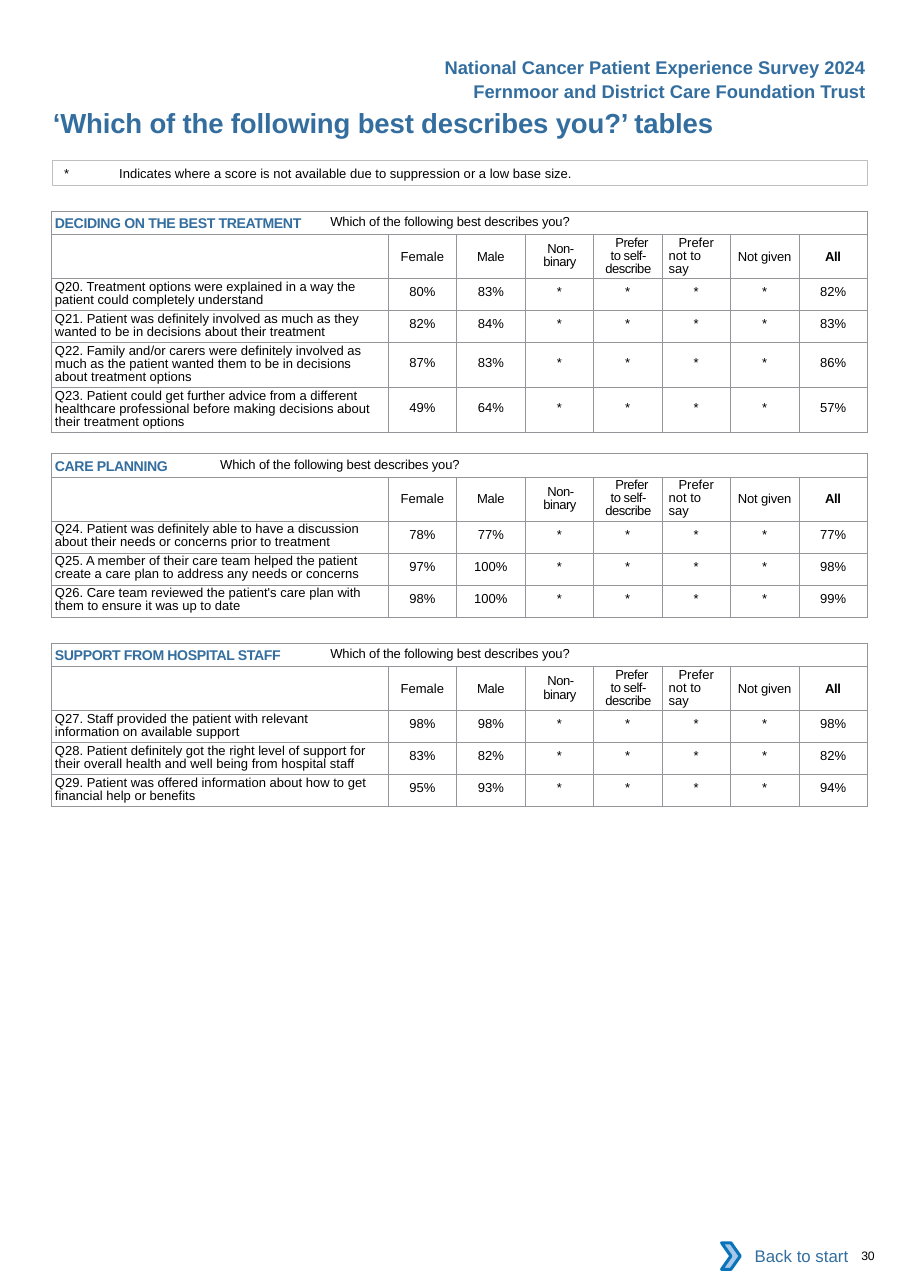
import pptx
import pptx.util
import pptx.dml.color
import pptx.enum.shapes
import pptx.enum.text
import pptx.oxml
import pptx.oxml.ns

Pt = pptx.util.Pt
Align = pptx.enum.text.PP_ALIGN
Anchor = pptx.enum.text.MSO_ANCHOR
Shape = pptx.enum.shapes.MSO_SHAPE
ns = pptx.oxml.ns.nsdecls("a")

hues = {
    "blue": "336E9F",
    "black": "000000",
    "grid": "939598",
    "frame": "BFBFBF",
    "white": "FFFFFF",
    "pale": "A8C7E9",
    "edge": "0A74BB",
}
rgb = {name: pptx.dml.color.RGBColor.from_string(hue) for name, hue in hues.items()}


def style(par, size, hue="black", bold=False, align=Align.LEFT, left=0, first=0, line=None, tab=None, track=0):
    par.alignment = align
    if line:
        par.line_spacing = Pt(line)
    props = par._p.get_or_add_pPr()
    props.set("marL", str(Pt(left)))
    props.set("indent", str(Pt(first)))
    if tab:
        props.append(pptx.oxml.parse_xml(
            f'<a:tabLst {ns}><a:tab pos="{Pt(tab)}" algn="l"/></a:tabLst>'))
    font = par.font
    font.name, font.size, font.bold = "Arial", Pt(size), bold
    font.color.rgb = rgb[hue]
    if track:
        font._rPr.set("spc", str(track))


def inset(box, left=0, top=0, right=0, bottom=0):
    box.margin_left, box.margin_top = Pt(left), Pt(top)
    box.margin_right, box.margin_bottom = Pt(right), Pt(bottom)


prs = pptx.Presentation()
prs.slide_width, prs.slide_height = Pt(594.72), Pt(841.68)
slide = prs.slides.add_slide(prs.slide_layouts[5])
shapes = slide.shapes

title = shapes.title
title.left, title.top, title.width, title.height = Pt(33.84), Pt(69.4), Pt(450), Pt(21.6)
frame = title.text_frame
frame.text = "‘Which of the following best describes you?’ tables"
frame.word_wrap = True
frame.auto_size = pptx.enum.text.MSO_AUTO_SIZE.NONE
frame.vertical_anchor = Anchor.MIDDLE
inset(frame)
style(frame.paragraphs[0], 18, "blue", True, left=0.7, track=-10)

heads = [
    ("Female", {}),
    ("Male", {"track": -20}),
    ("Non- binary", {"left": 10.8, "first": 0.7, "line": 8.6, "track": -30}),
    ("Prefer to self- describe", {"left": 7.2, "first": 4.3, "line": 8.6, "track": -30}),
    ("Prefer not to say", {"left": 4.3, "first": 6.5, "line": 8.6, "align": Align.LEFT}),
    ("Not given", {"track": -10}),
    ("All", {"bold": True, "track": -20}),
]
rights = {2: 10, 3: 6.5, 4: 6}

blocks = [
    (138, "DECIDING ON THE BEST TREATMENT", [
        ("Q20. Treatment options were explained in a way the patient could completely understand", 80, 83, 82, 20.9),
        ("Q21. Patient was definitely involved as much as they wanted to be in decisions about their treatment", 82, 84, 83, 20.9),
        ("Q22. Family and/or carers were definitely involved as much as the patient wanted them to be in decisions about treatment options", 87, 83, 86, 29.4),
        ("Q23. Patient could get further advice from a different healthcare professional before making decisions about their treatment options", 49, 64, 57, 29.4),
    ]),
    (296.4, "CARE PLANNING", [
        ("Q24. Patient was definitely able to have a discussion about their needs or concerns prior to treatment", 78, 77, 77, 20.9),
        ("Q25. A member of their care team helped the patient create a care plan to address any needs or concerns", 97, 100, 98, 20.9),
        ("Q26. Care team reviewed the patient's care plan with them to ensure it was up to date", 98, 100, 99, 20.9),
    ]),
    (420.4, "SUPPORT FROM HOSPITAL STAFF", [
        ("Q27. Staff provided the patient with relevant information on available support", 98, 98, 98, 20.9),
        ("Q28. Patient definitely got the right level of support for their overall health and well being from hospital staff", 83, 82, 82, 20.9),
        ("Q29. Patient was offered information about how to get financial help or benefits", 95, 93, 94, 20.9),
    ]),
]

for top, theme, items in blocks:
    tall = [15.3, 28.8] + [item[-1] for item in items]
    table = shapes.add_table(len(tall), 8, Pt(33.7), Pt(top), Pt(533.25), Pt(sum(tall))).table
    table.first_row = table.horz_banding = False
    for row, high in zip(table.rows, tall):
        row.height = Pt(high)
    for num, col in enumerate(table.columns):
        col.width = Pt(44.75 if num else 220)
    for cell in table.iter_cells():
        inset(cell)
        for side in ("lnL", "lnR", "lnT", "lnB"):
            cell._tc.get_or_add_tcPr().append(pptx.oxml.parse_xml(
                f'<a:{side} {ns} w="{Pt(0.5)}"><a:solidFill><a:srgbClr val="{hues["grid"]}"/>'
                f'</a:solidFill></a:{side}>'))
        cell.fill.background()

    head = table.cell(0, 0)
    head.merge(table.cell(0, 7))
    head.vertical_anchor = Anchor.MIDDLE
    par = head.text_frame.paragraphs[0]
    style(par, 8.5, left=2.2, line=11.8, tab=305.3, track=-10)
    label = par.add_run()
    label.text = theme + "\t"
    label.font.size, label.font.bold = Pt(15.8), True
    label.font.color.rgb = rgb["blue"]
    label.font._rPr.set("baseline", "-8000")
    label.font._rPr.set("spc", "-20")
    par.add_run().text = "Which of the following best describes you?"

    for num, (text, look) in enumerate(heads):
        cell = table.cell(1, num + 1)
        cell.text = text
        cell.vertical_anchor = Anchor.MIDDLE
        inset(cell, right=rights.get(num, 0))
        style(cell.text_frame.paragraphs[0], 8.5, **{"align": Align.CENTER, **look})

    for line, (quest, female, male, total, high) in enumerate(items, 2):
        cell = table.cell(line, 0)
        cell.text = quest
        inset(cell, top=1.6, right=10.5)
        style(cell.text_frame.paragraphs[0], 8.5, left=2.2, line=8.6)
        marks = [f"{female}%", f"{male}%"] + ["*"] * 4 + [f"{total}%"]
        for num, mark in enumerate(marks, 1):
            cell = table.cell(line, num)
            cell.text = mark
            inset(cell, top=8.6 if high > 25 else 4.2)
            style(cell.text_frame.paragraphs[0], 8.5, align=Align.CENTER)

note = shapes.add_shape(Shape.RECTANGLE, Pt(34), Pt(104.8), Pt(533), Pt(16.4))
note.shadow.inherit = False
note.fill.background()
note.line.color.rgb = rgb["frame"]
note.line.width = Pt(0.5)
frame = note.text_frame
frame.text = "*\tIndicates where a score is not available due to suppression or a low base size."
inset(frame, top=2.9, bottom=2.9)
frame.vertical_anchor = Anchor.MIDDLE
style(frame.paragraphs[0], 8.5, left=7.9, tab=24.5)

for text, left, top, width in (
    ("Fernmoor and District Care Foundation Trust", 299.5, 49, 273.6),
    ("National Cancer Patient Experience Survey 2024", 282.2, 33.1, 290.9),
):
    frame = shapes.add_textbox(Pt(left), Pt(top), Pt(width), Pt(21.8)).text_frame
    frame.text = text
    frame.word_wrap = True
    style(frame.paragraphs[0], 12, "blue", True, Align.RIGHT)

frame = shapes.add_textbox(Pt(555.8), Pt(815.8), Pt(36.7), Pt(9.4)).text_frame
frame.text = "30"
frame.word_wrap = True
inset(frame)
style(frame.paragraphs[0], 8, left=7.2, track=-20)

group = shapes.add_group_shape().shapes
back = group.add_shape(Shape.RECTANGLE, Pt(476.6), Pt(805.7), Pt(85), Pt(30.2))
back.shadow.inherit = False
back.fill.solid()
back.fill.fore_color.rgb = rgb["white"]
back.line.fill.background()
back.text_frame.text = "Back to start"
back.text_frame.vertical_anchor = Anchor.MIDDLE
style(back.text_frame.paragraphs[0], 11, "blue", align=Align.RIGHT)

arrow = group.add_shape(Shape.CHEVRON, Pt(471.6), Pt(812.2), Pt(12.2), Pt(17.3))
arrow.shadow.inherit = False
arrow.fill.solid()
arrow.fill.fore_color.rgb = rgb["pale"]
arrow.line.color.rgb = rgb["edge"]
arrow.line.width = Pt(2)

prs.save("out.pptx")
